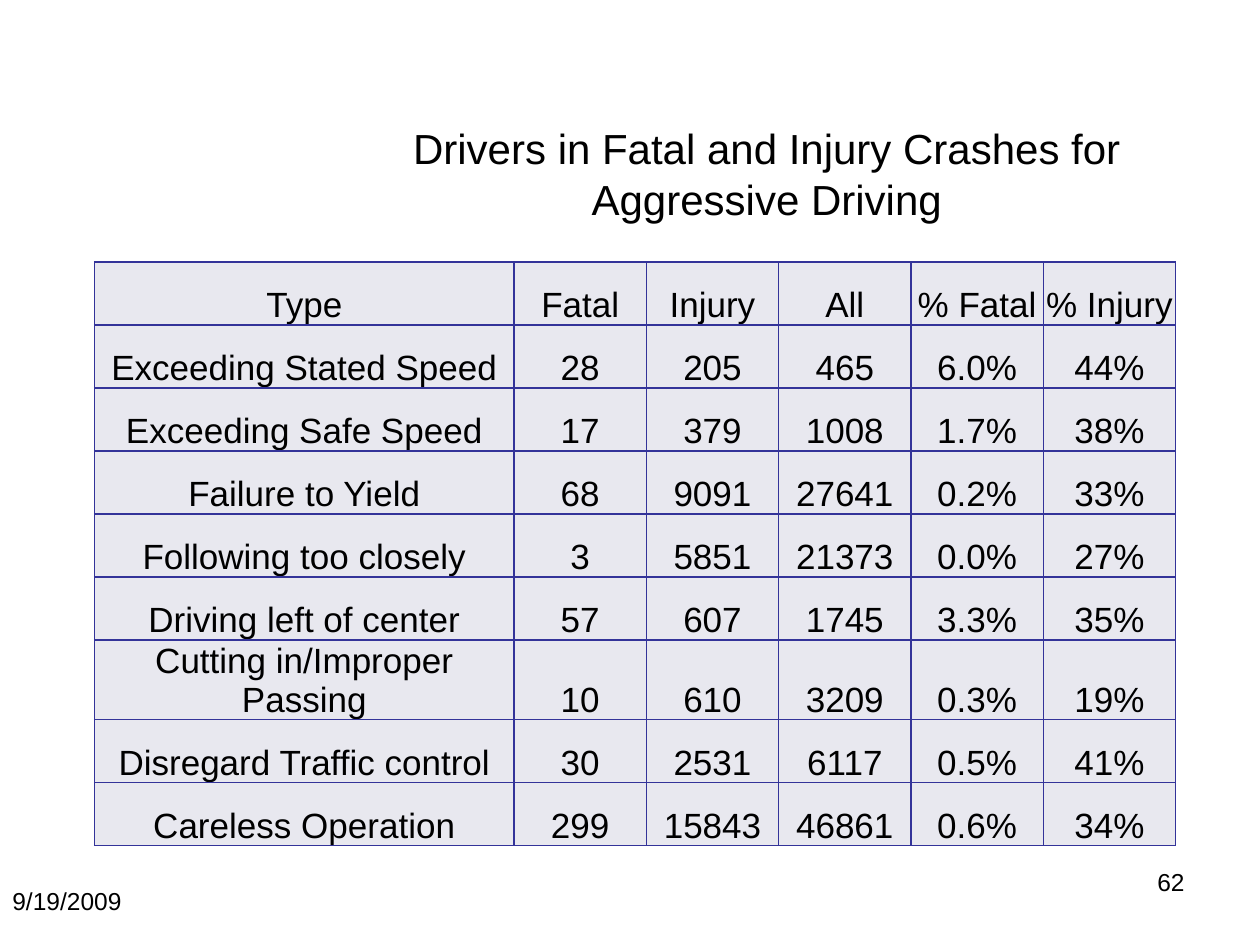
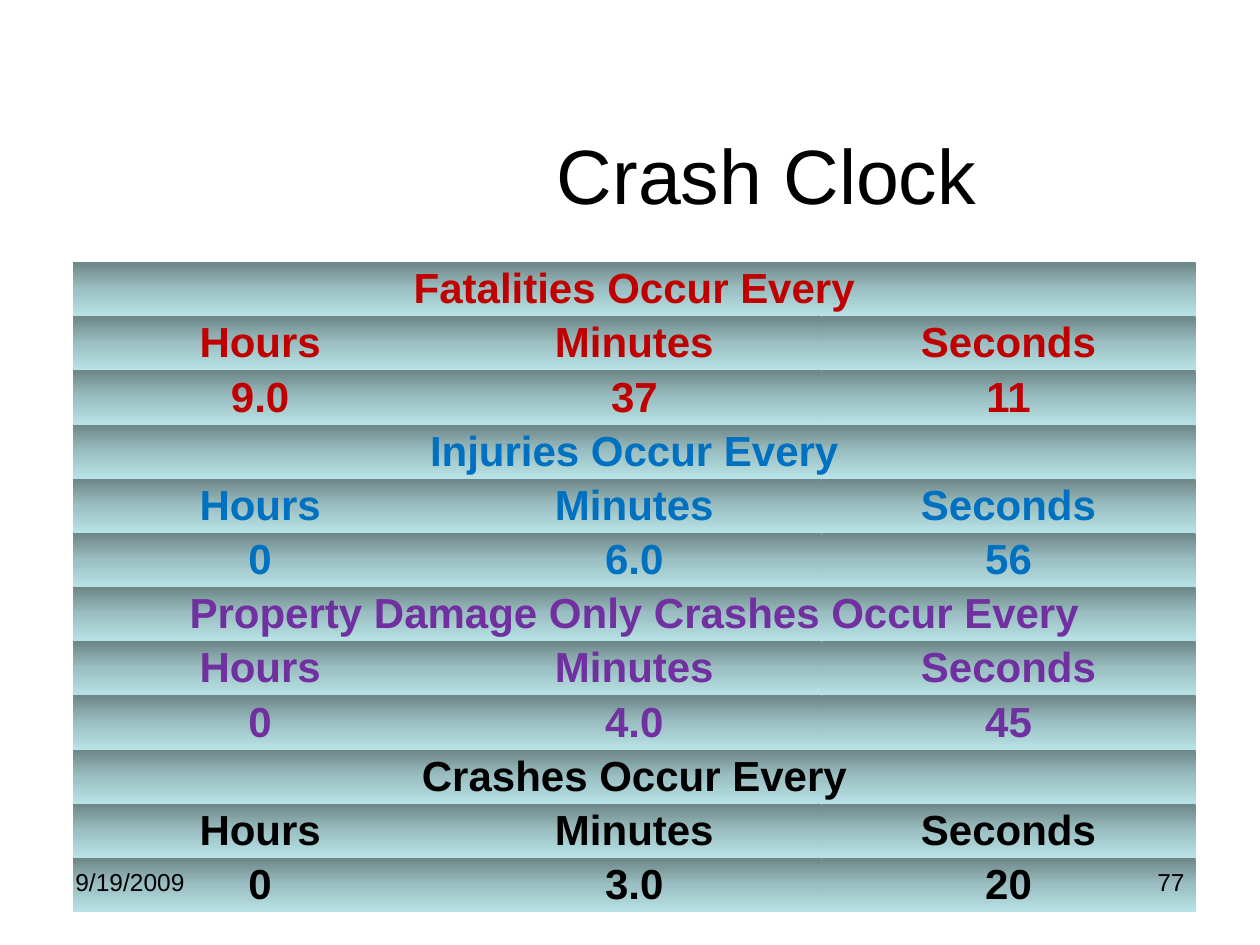
from pptx import Presentation
from pptx.dml.color import RGBColor
from pptx.enum.text import MSO_ANCHOR, MSO_AUTO_SIZE, PP_ALIGN
from pptx.oxml import parse_xml
from pptx.oxml.ns import nsdecls, qn
from pptx.util import Inches, Pt

LEFT, CENTER, RIGHT = PP_ALIGN.LEFT, PP_ALIGN.CENTER, PP_ALIGN.RIGHT
MIDDLE, BOTTOM = MSO_ANCHOR.MIDDLE, MSO_ANCHOR.BOTTOM
NO_AUTOFIT = MSO_AUTO_SIZE.NONE
TITLE_ONLY = 5
PLAIN_TABLE_STYLE = "{2D5ABB26-0587-4C30-8999-92F81FD0307C}"
FONT = "Arial"
COLORS = {
    "text": "000000",
    "grid": "333399",
    "cell": "E8E8EF",
    "band_top": "6D8688",
    "band_middle": "9BBFC2",
    "band_bottom": "B8E3E6",
    "fatalities": "C00000",
    "injuries": "0070C0",
    "damage": "7030A0",
}
DATE = "9/19/2009"

DRIVERS = [
    ("Type", "Fatal", "Injury", "All", "% Fatal", "% Injury"),
    ("Exceeding Stated Speed", "28", "205", "465", "6.0%", "44%"),
    ("Exceeding Safe Speed", "17", "379", "1008", "1.7%", "38%"),
    ("Failure to Yield", "68", "9091", "27641", "0.2%", "33%"),
    ("Following too closely", "3", "5851", "21373", "0.0%", "27%"),
    ("Driving left of center", "57", "607", "1745", "3.3%", "35%"),
    ("Cutting in/Improper Passing", "10", "610", "3209", "0.3%", "19%"),
    ("Disregard Traffic control", "30", "2531", "6117", "0.5%", "41%"),
    ("Careless Operation", "299", "15843", "46861", "0.6%", "34%"),
]
UNITS = ("Hours", "Minutes", "Seconds")
CLOCK = [
    ("Fatalities Occur Every", ("9.0", "37", "11"), "fatalities"),
    ("Injuries Occur Every", ("0", "6.0", "56"), "injuries"),
    ("Property Damage Only Crashes Occur Every", ("0", "4.0", "45"), "damage"),
    ("Crashes Occur Every", ("0", "3.0", "20"), "text"),
]


class Deck:
    def __init__(self):
        self.presentation = Presentation()
        self.presentation.slide_width = Inches(10)
        self.presentation.slide_height = Inches(7.5)
        self.slide = None

    def set_text(self, frame, text, size, align, color="text", bold=False):
        frame.text = text
        paragraph = frame.paragraphs[0]
        paragraph.alignment = align
        for run in paragraph.runs:
            run.font.name = FONT
            run.font.size = Pt(size)
            run.font.bold = bold
            run.font.color.rgb = RGBColor.from_string(COLORS[color])

    def add_slide(self, heading, size):
        layout = self.presentation.slide_layouts[TITLE_ONLY]
        self.slide = self.presentation.slides.add_slide(layout)
        title = self.slide.shapes.title
        title.left, title.top = Inches(2.67), Inches(0.75)
        title.width, title.height = Inches(6.83), Inches(1.25)
        frame = title.text_frame
        frame.auto_size = NO_AUTOFIT
        frame.vertical_anchor = MIDDLE
        self.set_text(frame, heading, size, CENTER)

    def label(self, text, left, top, align):
        box = self.slide.shapes.add_textbox(
            Inches(left), Inches(top), Inches(2.33), Inches(0.52))
        box.text_frame.word_wrap = True
        self.set_text(box.text_frame, text, 14, align)

    def footer(self, number, date_left=0.5, date_top=6.83):
        self.label(DATE, date_left, date_top, LEFT)
        self.label(number, 7.17, 6.83, RIGHT)

    def table(self, left, widths, row_count, row_height):
        table = self.slide.shapes.add_table(
            row_count, len(widths), Inches(left), Inches(2.08),
            Inches(sum(widths)), Inches(row_count * row_height)).table
        table.first_row = table.horz_banding = False
        table._tbl.tblPr.find(qn("a:tableStyleId")).text = PLAIN_TABLE_STYLE
        for column, width in zip(table.columns, widths):
            column.width = Inches(width)
        for row in table.rows:
            row.height = Inches(row_height)
        return table

    def cell(self, cell, text, size, anchor, margin, bottom, **style):
        cell.margin_left = cell.margin_right = cell.margin_top = Inches(margin)
        cell.margin_bottom = Inches(bottom)
        cell.vertical_anchor = anchor
        self.set_text(cell.text_frame, text, size, CENTER, **style)

    def grid_cell(self, cell, text):
        self.cell(cell, text, 20, BOTTOM, 0.01, 0)
        properties = cell._tc.get_or_add_tcPr()
        for side in ("lnL", "lnR", "lnT", "lnB"):
            properties.append(parse_xml(
                f'<a:{side} {nsdecls("a")} w="{Pt(1)}"><a:solidFill>'
                f'<a:srgbClr val="{COLORS["grid"]}"/></a:solidFill></a:{side}>'))
        cell.fill.solid()
        cell.fill.fore_color.rgb = RGBColor.from_string(COLORS["cell"])

    def band_cell(self, cell, text, color):
        self.cell(cell, text, 24, MIDDLE, 0.02, 0.02, color=color, bold=True)
        stops = "".join(
            f'<a:gs pos="{position}"><a:srgbClr val="{COLORS[name]}"/></a:gs>'
            for position, name in ((0, "band_top"), (50000, "band_middle"),
                                   (100000, "band_bottom")))
        cell._tc.get_or_add_tcPr().append(parse_xml(
            f'<a:gradFill {nsdecls("a")} rotWithShape="1"><a:gsLst>{stops}'
            '</a:gsLst><a:lin ang="5400000" scaled="0"/></a:gradFill>'))


def drivers_slide(deck):
    deck.add_slide("Drivers in Fatal and Injury Crashes for Aggressive Driving", 24)
    drivers = deck.table(0.75, [3.33] + [1.05] * 5, len(DRIVERS), 0.5)
    for row, values in enumerate(DRIVERS):
        for column, value in enumerate(values):
            deck.grid_cell(drivers.cell(row, column), value)
    deck.footer("62", date_left=0, date_top=6.98)


def clock_slide(deck):
    deck.add_slide("Crash Clock", 44)
    clock = deck.table(0.58, [2.97] * 3, 3 * len(CLOCK), 0.43)
    for group, (event, interval, color) in enumerate(CLOCK):
        top = 3 * group
        clock.cell(top, 0).merge(clock.cell(top, 2))
        deck.band_cell(clock.cell(top, 0), event, color)
        for row, values in enumerate((UNITS, interval), top + 1):
            for column, value in enumerate(values):
                deck.band_cell(clock.cell(row, column), value, color)
    deck.footer("77")


def main():
    deck = Deck()
    drivers_slide(deck)
    clock_slide(deck)
    deck.presentation.save("out.pptx")


if __name__ == "__main__":
    main()
